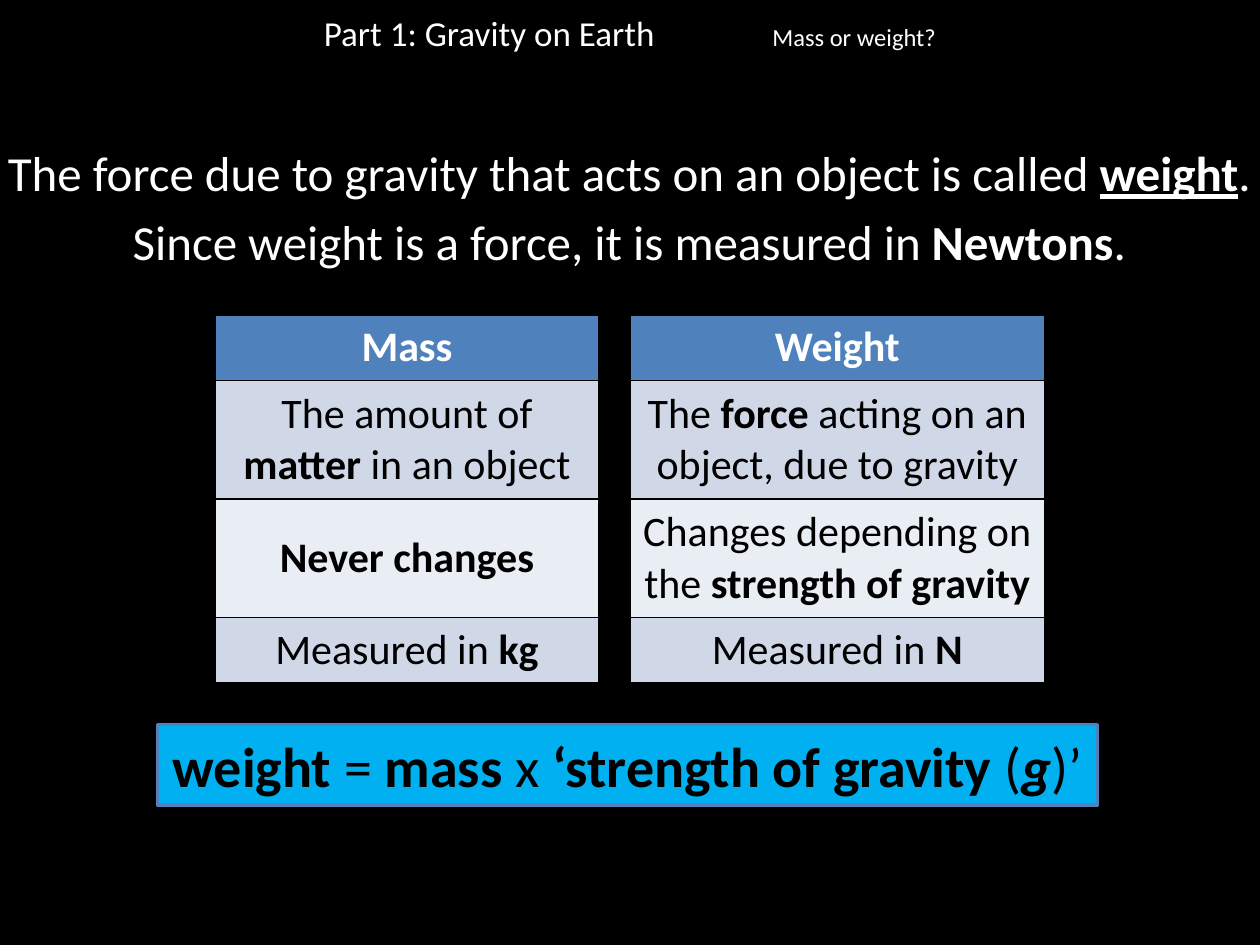
"""Build a slide that compares mass and weight."""
from dataclasses import dataclass

from lxml.etree import SubElement
from pptx import Presentation
from pptx.dml.color import RGBColor
from pptx.enum.shapes import MSO_SHAPE
from pptx.enum.text import MSO_ANCHOR, MSO_AUTO_SIZE, PP_ALIGN
from pptx.oxml import parse_xml
from pptx.oxml.ns import nsdecls, qn
from pptx.util import Pt

BLACK = RGBColor(0x00, 0x00, 0x00)
WHITE = RGBColor(0xFF, 0xFF, 0xFF)
BLUE = RGBColor(0x4F, 0x81, 0xBD)
SKY = RGBColor(0x00, 0xB0, 0xF0)
BAND_DARK = RGBColor(0xD0, 0xD8, 0xE8)
BAND_LIGHT = RGBColor(0xE9, 0xED, 0xF4)
FONT = "Calibri"
COLUMN_WIDTHS = (218.9, 18, 236.9)


@dataclass(frozen=True)
class Span:
    text: str
    bold: bool = False
    italic: bool = False
    underline: bool = False
    size: float | None = None


@dataclass(frozen=True)
class ComparisonRow:
    height: float
    fill: RGBColor
    color: RGBColor
    mass: list[Span]
    weight: list[Span]


ROWS = [
    ComparisonRow(37.4, BLUE, WHITE, [Span("Mass", True)], [Span("Weight", True)]),
    ComparisonRow(
        67.7, BAND_DARK, BLACK,
        [Span("The amount of "), Span("matter", True), Span(" in an object")],
        [Span("The "), Span("force", True), Span(" acting on an object, due to gravity")],
    ),
    ComparisonRow(
        67.7, BAND_LIGHT, BLACK,
        [Span("Never changes", True)],
        [Span("Changes depending on the "), Span("strength of gravity", True)],
    ),
    ComparisonRow(
        37.4, BAND_DARK, BLACK,
        [Span("Measured in "), Span("kg", True)],
        [Span("Measured in "), Span("N", True)],
    ),
]
STATEMENTS = [
    [
        Span("The force due to gravity that acts on an object is called "),
        Span("weight", True, underline=True),
        Span("."),
    ],
    [Span("Since weight is a force, it is measured in "), Span("Newtons", True), Span(".")],
]
FORMULA = [
    Span("weight ", True), Span("="), Span(" mass ", True), Span("x"),
    Span(" ‘strength of gravity ", True), Span("("), Span("g", True, True), Span(")’"),
]
HEADING = [Span("Part 1: Gravity on Earth\t\t"), Span("Mass or weight?", size=14)]


def write_spans(paragraph, spans: list[Span], size: float, color: RGBColor) -> None:
    paragraph.alignment = PP_ALIGN.CENTER
    for span in spans:
        run = paragraph.add_run()
        run.text = span.text
        font = run.font
        font.name = FONT
        font.size = Pt(span.size or size)
        font.bold, font.italic, font.underline = span.bold, span.italic, span.underline
        font.color.rgb = color


def fit_to_text(text_frame) -> None:
    text_frame.word_wrap = False
    text_frame.auto_size = MSO_AUTO_SIZE.SHAPE_TO_FIT_TEXT


def add_statements(slide) -> None:
    text_frame = slide.shapes.add_textbox(Pt(-16.6), Pt(77.8), Pt(752.4), Pt(81.4)).text_frame
    fit_to_text(text_frame)
    for index, spans in enumerate(STATEMENTS):
        paragraph = text_frame.add_paragraph() if index else text_frame.paragraphs[0]
        write_spans(paragraph, spans, 28, WHITE)
        paragraph.space_after = Pt(6)


def set_borders(cell) -> None:
    properties = cell._tc.get_or_add_tcPr()
    for index, side in enumerate("LRTB"):
        line = parse_xml(f'<a:ln{side} {nsdecls("a")} w="{Pt(1)}"/>')
        fill = SubElement(line, qn("a:solidFill"))
        SubElement(fill, qn("a:srgbClr"), val=str(BLACK))
        properties.insert(index, line)


def add_comparison(slide) -> None:
    frame = slide.shapes.add_table(
        len(ROWS), len(COLUMN_WIDTHS), Pt(123.1), Pt(180),
        Pt(sum(COLUMN_WIDTHS)), Pt(sum(row.height for row in ROWS)),
    )
    table = frame.table
    table.first_row = table.horz_banding = False
    for column, width in zip(table.columns, COLUMN_WIDTHS):
        column.width = Pt(width)
    for row_index, row in enumerate(ROWS):
        table.rows[row_index].height = Pt(row.height)
        for column_index, spans in enumerate((row.mass, [], row.weight)):
            cell = table.cell(row_index, column_index)
            cell.vertical_anchor = MSO_ANCHOR.MIDDLE
            if spans:
                cell.fill.solid()
                cell.fill.fore_color.rgb = row.fill
                write_spans(cell.text_frame.paragraphs[0], spans, 24, row.color)
            else:
                cell.fill.background()
            set_borders(cell)


def add_formula(slide) -> None:
    shape = slide.shapes.add_shape(MSO_SHAPE.RECTANGLE, Pt(90), Pt(414), Pt(537.1), Pt(46.1))
    shape.shadow.inherit = False
    shape.fill.solid()
    shape.fill.fore_color.rgb = SKY
    shape.line.color.rgb = BLUE
    shape.line.width = Pt(2)
    fit_to_text(shape.text_frame)
    write_spans(shape.text_frame.paragraphs[0], FORMULA, 32, BLACK)


def add_heading(slide) -> None:
    text_frame = slide.shapes.add_textbox(Pt(0), Pt(5.8), Pt(720), Pt(30.2)).text_frame
    text_frame.word_wrap = True
    paragraph = text_frame.paragraphs[0]
    properties = paragraph._p.get_or_add_pPr()
    properties.set("marL", str(Pt(40.3)))
    properties.set("indent", str(Pt(-40.3)))
    paragraph.line_spacing = 0.9
    write_spans(paragraph, HEADING, 20, WHITE)


def main() -> None:
    presentation = Presentation()
    presentation.slide_width, presentation.slide_height = Pt(720), Pt(540)
    slide = presentation.slides.add_slide(presentation.slide_layouts[6])
    slide.background.fill.solid()
    slide.background.fill.fore_color.rgb = BLACK
    add_statements(slide)
    add_comparison(slide)
    add_formula(slide)
    add_heading(slide)
    presentation.save("out.pptx")


if __name__ == "__main__":
    main()
